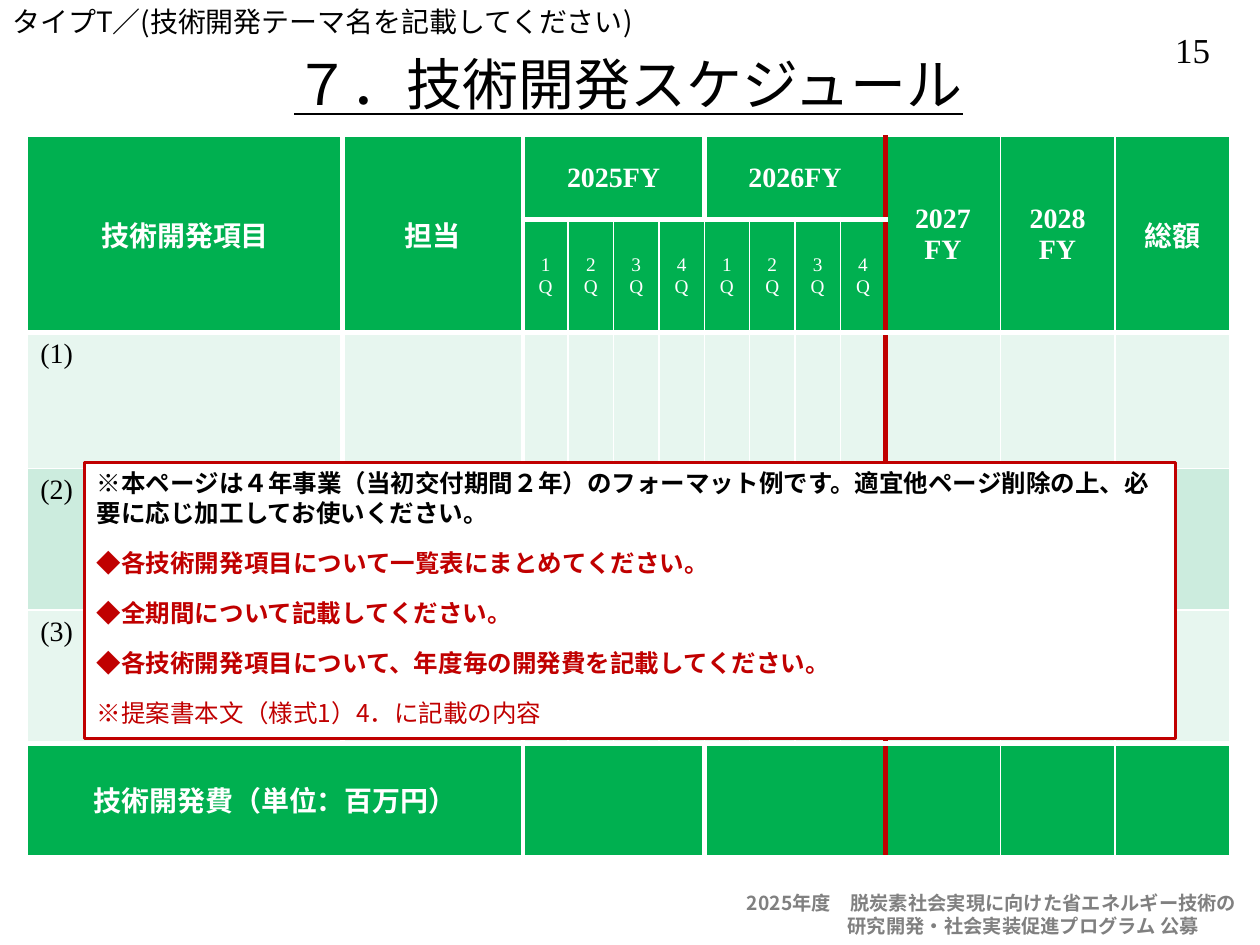
"""Build the technology development schedule slide."""
from dataclasses import dataclass

import pptx
import pptx.dml.color
import pptx.enum.shapes
import pptx.enum.text
import pptx.oxml.ns
import pptx.util
from lxml import etree
from pptx.util import Inches

ALIGN = pptx.enum.text.PP_ALIGN
MIDDLE = pptx.enum.text.MSO_ANCHOR.MIDDLE


@dataclass(frozen=True)
class Theme:
    """Colours, fonts and type sizes of the slide."""
    black: str = "000000"
    white: str = "FFFFFF"
    grey: str = "808080"
    red: str = "C00000"
    green: str = "00B050"
    pale: str = "E7F6EF"
    tint: str = "CCECDE"
    serif: str = "Times New Roman"
    sans: str = "Noto Sans CJK JP"
    title: int = 32
    page: int = 20
    body: int = 16
    note: int = 14
    small: int = 11
    leading: float = 1.19
    thin: int = 1
    thick: int = 3


THEME = Theme()
COLUMNS = [2.5, 1.43] + [0.36] * 8 + [0.91] * 3
ROWS = [0.66, 0.9, 1.08, 1.12, 1.06, 0.89]
FILLS = [THEME.green, THEME.green, THEME.pale, THEME.tint, THEME.pale, THEME.green]
MERGES = [(0, 0, 1, 0), (0, 1, 1, 1), (0, 2, 0, 5), (0, 6, 0, 9),
          (0, 10, 1, 10), (0, 11, 1, 11), (0, 12, 1, 12),
          (5, 0, 5, 1), (5, 2, 5, 5), (5, 6, 5, 9)]
HEADINGS = {(0, 0): ["技術開発項目"], (0, 1): ["担当"], (0, 2): ["2025FY"],
            (0, 6): ["2026FY"], (0, 10): ["2027", "FY"], (0, 11): ["2028", "FY"],
            (0, 12): ["総額"], (5, 0): ["技術開発費（単位：百万円）"]}


def colour(value):
    """Return an RGB colour from its hexadecimal text."""
    return pptx.dml.color.RGBColor.from_string(value)


def add_run(paragraph, text, size, ink, font=THEME.sans, bold=False, underline=False):
    """Add one formatted run to a paragraph."""
    run = paragraph.add_run()
    run.text = text
    run.font.size = pptx.util.Pt(size)
    run.font.color.rgb = colour(ink)
    run.font.bold = bold
    run.font.underline = underline
    run.font.name = font
    east_asian = etree.SubElement(run.font._element, pptx.oxml.ns.qn("a:ea"))
    east_asian.set("typeface", THEME.sans)


def add_paragraph(frame, index, align=ALIGN.LEFT):
    """Return the paragraph at an index, adding it when it is not the first."""
    paragraph = frame.add_paragraph() if index else frame.paragraphs[0]
    paragraph.alignment = align
    return paragraph


def add_label(slide, box, lines, size, ink, align=ALIGN.LEFT, wrap=True, indent=0, **style):
    """Add a text box whose later lines may be indented."""
    frame = slide.shapes.add_textbox(*map(Inches, box)).text_frame
    frame.word_wrap = wrap
    for index, line in enumerate(lines):
        paragraph = add_paragraph(frame, index, align)
        paragraph.line_spacing = pptx.util.Pt(size * THEME.leading)
        if index and indent:
            paragraph._p.get_or_add_pPr().set("marL", str(Inches(indent)))
        add_run(paragraph, line, size, ink, **style)


def set_borders(cell, edges):
    """Draw the four borders of a cell from colour and width pairs."""
    properties = cell._tc.get_or_add_tcPr()
    for side, (ink, width) in edges.items():
        line = etree.SubElement(properties, pptx.oxml.ns.qn("a:ln" + side))
        line.set("w", str(pptx.util.Pt(width)))
        fill = etree.SubElement(line, pptx.oxml.ns.qn("a:solidFill"))
        etree.SubElement(fill, pptx.oxml.ns.qn("a:srgbClr")).set("val", ink)


def vertical_edge(row, boundary):
    """Return the colour and width of a column boundary."""
    if boundary == 10:
        return THEME.red, THEME.thick
    heavy = boundary in (1, 2) or (boundary == 6 and row in (0, 5))
    return THEME.white, THEME.thick if heavy else THEME.thin


def horizontal_edge(boundary):
    """Return the colour and width of a row boundary."""
    return THEME.white, THEME.thick if boundary in (1, 2, 5) else THEME.thin


def fill_cell(cell, lines, size, ink, align=ALIGN.CENTER, bold=False):
    """Write lines of text into a table cell."""
    for index, line in enumerate(lines):
        paragraph = add_paragraph(cell.text_frame, index, align)
        add_run(paragraph, line, size, ink, THEME.serif, bold)
    if align == ALIGN.CENTER:
        cell.vertical_anchor = MIDDLE


def add_schedule(slide):
    """Add the schedule table with its headings, rows and totals."""
    table = slide.shapes.add_table(
        len(ROWS), len(COLUMNS), Inches(0.22), Inches(1.08),
        Inches(sum(COLUMNS)), Inches(sum(ROWS))).table
    table.first_row = table.horz_banding = False
    for column, width in zip(table.columns, COLUMNS):
        column.width = Inches(width)
    for row, height in zip(table.rows, ROWS):
        row.height = Inches(height)
    for row, fill in enumerate(FILLS):
        for column in range(len(COLUMNS)):
            cell = table.cell(row, column)
            set_borders(cell, {"L": vertical_edge(row, column),
                               "R": vertical_edge(row, column + 1),
                               "T": horizontal_edge(row),
                               "B": horizontal_edge(row + 1)})
            cell.fill.solid()
            cell.fill.fore_color.rgb = colour(fill)
    for top, left, bottom, right in MERGES:
        table.cell(top, left).merge(table.cell(bottom, right))
    for place, lines in HEADINGS.items():
        fill_cell(table.cell(*place), lines, THEME.body, THEME.white, bold=True)
    for quarter in range(8):
        fill_cell(table.cell(1, quarter + 2), [f"{quarter % 4 + 1}Q"], THEME.small, THEME.white)
    for item in (1, 2, 3):
        fill_cell(table.cell(item + 1, 0), [f"({item})"], THEME.body, THEME.black, ALIGN.LEFT)


def add_guidance(slide):
    """Add the framed box of instructions over the table."""
    shape = slide.shapes.add_shape(
        pptx.enum.shapes.MSO_SHAPE.RECTANGLE, *map(Inches, (0.67, 3.67, 8.66, 2.19)))
    shape.shadow.inherit = False
    shape.fill.solid()
    shape.fill.fore_color.rgb = colour(THEME.white)
    shape.line.color.rgb = colour(THEME.red)
    shape.line.width = pptx.util.Pt(1.5)
    frame = shape.text_frame
    frame.word_wrap = True
    frame.vertical_anchor = pptx.enum.text.MSO_ANCHOR.TOP
    notes = [
        ("※本ページは４年事業（当初交付期間２年）のフォーマット例です。"
         "適宜他ページ削除の上、必要に応じ加工してお使いください。", THEME.black, True),
        ("◆各技術開発項目について一覧表にまとめてください。", THEME.red, True),
        ("◆全期間について記載してください。", THEME.red, True),
        ("◆各技術開発項目について、年度毎の開発費を記載してください。", THEME.red, True),
        ("※提案書本文（様式1）4．に記載の内容", THEME.red, False)]
    for index, (text, ink, bold) in enumerate(notes):
        paragraph = add_paragraph(frame, index)
        paragraph.line_spacing = pptx.util.Pt(THEME.note * THEME.leading)
        if index:
            paragraph.space_before = pptx.util.Pt(12)
        add_run(paragraph, text, THEME.note, ink, bold=bold)


def main():
    """Build and save the presentation."""
    presentation = pptx.Presentation()
    presentation.slide_width, presentation.slide_height = Inches(10), Inches(7.5)
    slide = presentation.slides.add_slide(presentation.slide_layouts[6])
    add_label(slide, (9.14, 0.18, 0.65, 0.43), ["15"], THEME.page, THEME.black,
              ALIGN.CENTER, wrap=False, font=THEME.serif)
    add_label(slide, (0, -0.01, 8.4, 0.37), ["タイプT／(技術開発テーマ名を記載してください)"],
              THEME.body, THEME.black)
    add_label(slide, (5.83, 7.03, 4.17, 0.47),
              ["2025年度　脱炭素社会実現に向けた省エネルギー技術の",
               "研究開発・社会実装促進プログラム 公募"],
              THEME.small, THEME.grey, indent=0.8, bold=True)
    add_label(slide, (0.74, 0.35, 8.5, 0.7), ["７．技術開発スケジュール"],
              THEME.title, THEME.black, ALIGN.CENTER, underline=True)
    add_schedule(slide)
    add_guidance(slide)
    presentation.save("out.pptx")


if __name__ == "__main__":
    main()
